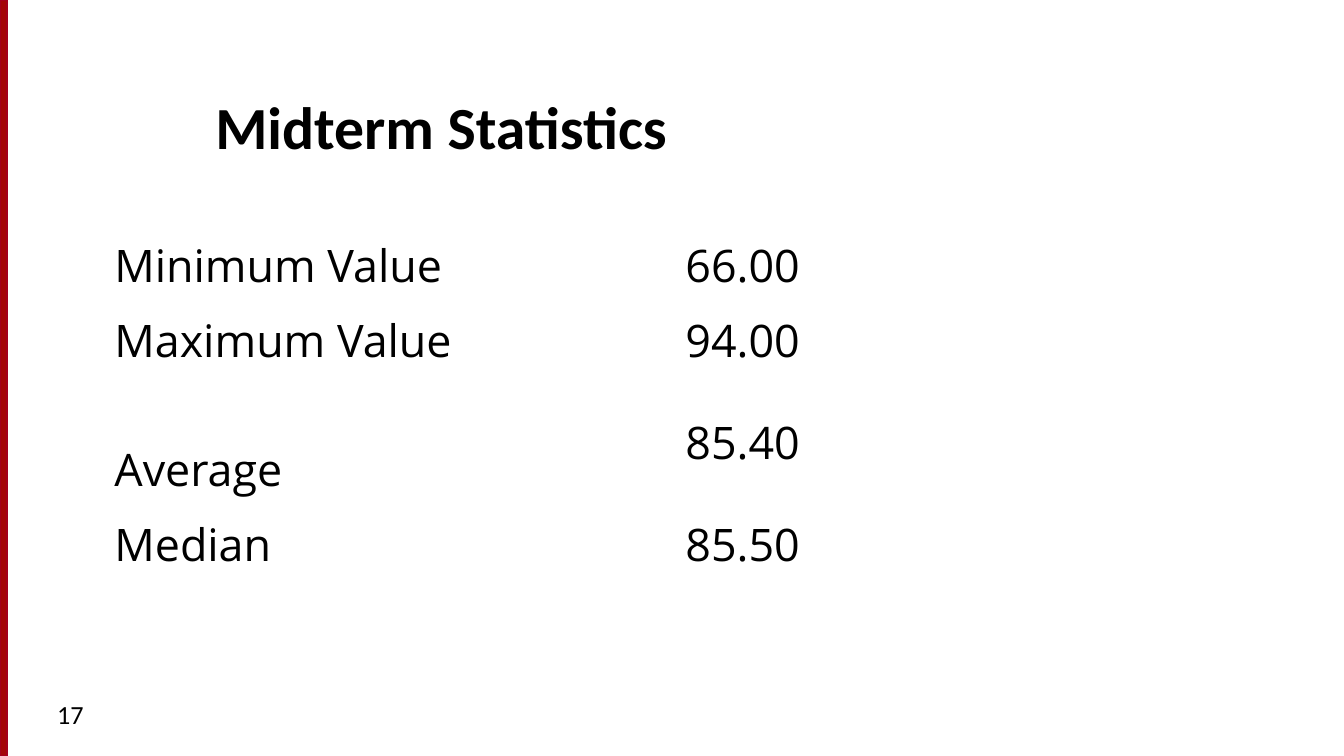
import pptx
import pptx.util
import pptx.dml.color
import pptx.enum.shapes
import pptx.enum.text

PX = 914400 / 134.4
COLORS = {"bar": "A40508", "bar_line": "A4001D", "text": "000000"}
TITLE = {"name": "Calibri", "size": pptx.util.Pt(32), "bold": True}
BODY = {"name": "Open Sans", "size": pptx.util.Pt(24), "bold": False}
NUMBER = {"name": "Calibri", "size": pptx.util.Pt(14), "bold": False}


def px(*lengths):
    return [pptx.util.Emu(round(length * PX)) for length in lengths]


def write(frame, text, font):
    span = frame.paragraphs[0].add_run()
    span.text = text
    for key, value in font.items():
        setattr(span.font, key, value)
    span.font.color.rgb = pptx.dml.color.RGBColor.from_string(COLORS["text"])


deck = pptx.Presentation()
deck.slide_width, deck.slide_height = px(1344, 756)
page = deck.slides.add_slide(deck.slide_layouts[6])

# Red edge bar
bar = page.shapes.add_shape(pptx.enum.shapes.MSO_SHAPE.RECTANGLE, *px(0, 0, 7, 756))
bar.shadow.inherit = False
bar.fill.solid()
bar.fill.fore_color.rgb = pptx.dml.color.RGBColor.from_string(COLORS["bar"])
bar.line.color.rgb = pptx.dml.color.RGBColor.from_string(COLORS["bar_line"])
bar.line.width = pptx.util.Pt(0.75)

# Title and page number
anchors = pptx.enum.text.MSO_ANCHOR
for text, place, font, anchor in [
    ("Midterm Statistics", (202, 56, 1098, 109), TITLE, anchors.BOTTOM),
    ("17", (44, 692, 292, 51), NUMBER, anchors.TOP),
]:
    box = page.shapes.add_textbox(*px(*place))
    box.text_frame.word_wrap = True
    box.text_frame.vertical_anchor = anchor
    box.text_frame.margin_bottom = px(3)[0]
    write(box.text_frame, text, font)

# Statistics table: label, value, row height, space above the label
statistics = [
    ("Minimum Value", "66.00", 75, 7),
    ("Maximum Value", "94.00", 75, 7),
    ("Average", "85.40", 129, 61),
    ("Median", "85.50", 75, 7),
]
total = sum(height for _, _, height, _ in statistics)
table = page.shapes.add_table(len(statistics), 2, *px(101, 228, 1142, total)).table
table.first_row = False
table.horz_banding = False
for row, (label, value, height, space) in enumerate(statistics):
    table.rows[row].height = px(height)[0]
    table.cell(row, 0).margin_top = px(space)[0]
    for column, text in enumerate((label, value)):
        cell = table.cell(row, column)
        cell.fill.background()
        cell.vertical_anchor = anchors.MIDDLE
        write(cell.text_frame, text, BODY)

# Plain table style without grid lines
style = table._tbl.tblPr.find(pptx.oxml.ns.qn("a:tableStyleId"))
style.text = "{2D5ABB26-0587-4C30-8999-92F81FD0307C}"

deck.save("out.pptx")
